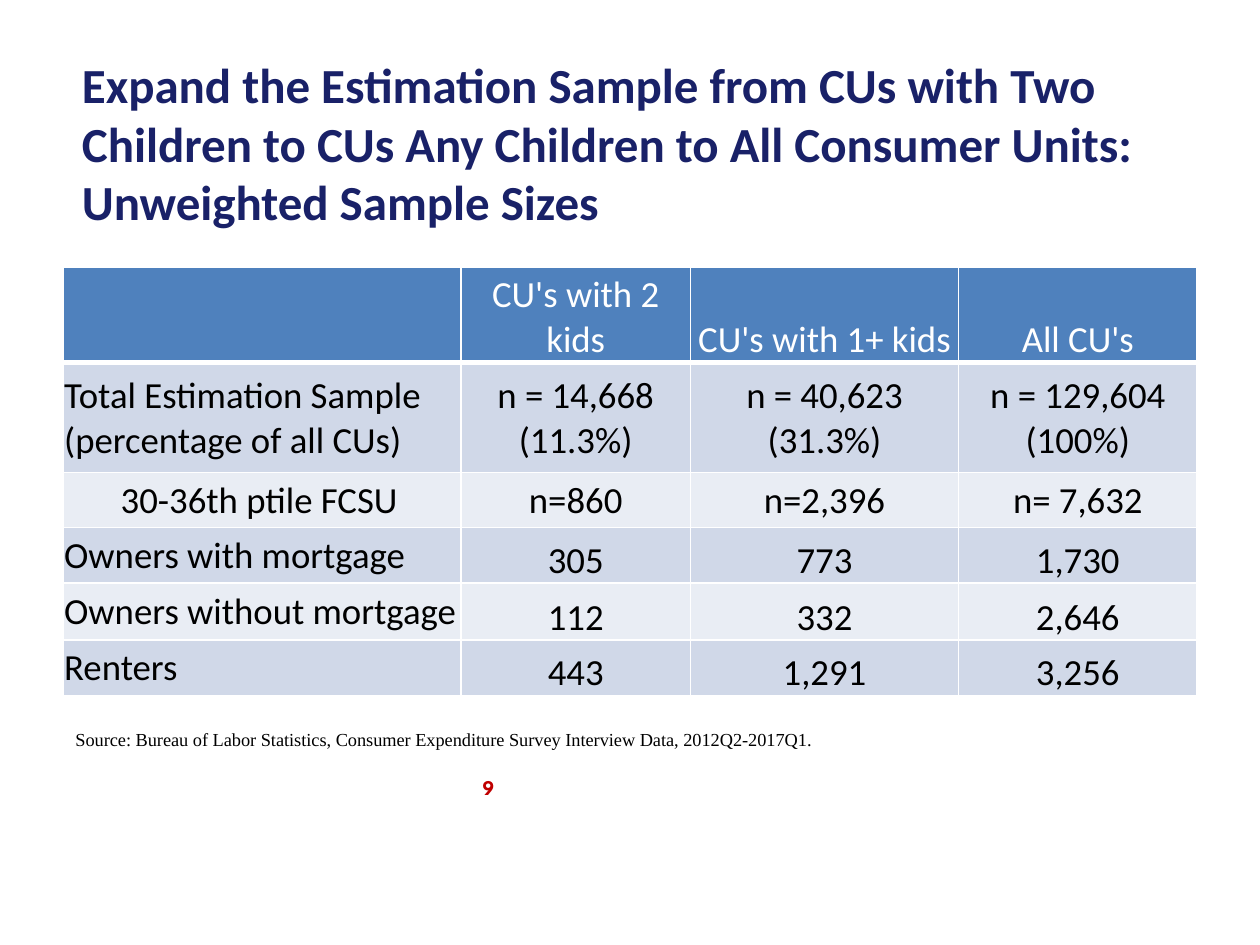
from lxml import etree
from pptx import Presentation
from pptx import util as u
from pptx.dml.color import RGBColor
from pptx.enum import text
from pptx.oxml import ns

Pt = u.Pt
COLORS = {"title": "192168", "header": "4F81BD", "odd": "D0D8E8", "even": "E9EDF4",
          "white": "FFFFFF", "black": "000000", "number": "C00000"}
FORMATS = {
    "title": {"name": "Calibri", "size": Pt(28), "bold": True},
    "cell": {"name": "Calibri", "size": Pt(21), "bold": False},
    "number": {"name": "League Spartan", "size": Pt(12), "bold": True},
    "source": {"name": "Times New Roman", "size": Pt(10.5), "bold": False},
}
COL_WIDTHS = [227.5, 131, 153.4, 136.1]
ROW_HEIGHTS = [54.7, 62.6, 31.7, 31.7, 32.4, 31.7]
ROWS = [
    ["", "CU's with 2 kids", "CU's with 1+ kids", "All CU's"],
    ["Total Estimation Sample (percentage of all CUs)",
     "n = 14,668\n(11.3%)", "n = 40,623\n(31.3%)", "n = 129,604\n(100%)"],
    ["30-36th ptile FCSU", "n=860", "n=2,396", "n= 7,632"],
    ["Owners with mortgage", "305", "773", "1,730"],
    ["Owners without mortgage", "112", "332", "2,646"],
    ["Renters", "443", "1,291", "3,256"],
]
SUBGROUP_ROW = 2
SUBGROUP_INDENT = 33
BOTTOM_ROWS = (0, 3, 4, 5)
LEFT, CENTER = text.PP_ALIGN.LEFT, text.PP_ALIGN.CENTER
MIDDLE, BOTTOM = text.MSO_ANCHOR.MIDDLE, text.MSO_ANCHOR.BOTTOM


class Deck:
    """Holds the style and the current slide."""

    def __init__(self):
        self.prs = Presentation()
        self.prs.slide_width, self.prs.slide_height = Pt(720), Pt(540)
        self.s = self.prs.slides.add_slide(self.prs.slide_layouts[5])

    def set_text(self, tf, words, style, color, align=LEFT):
        tf.text = words
        for p in tf.paragraphs:
            p.alignment = align
            for item in (p, *p.runs):
                for name, value in FORMATS[style].items():
                    setattr(item.font, name, value)
                item.font.color.rgb = RGBColor.from_string(COLORS[color])

    def frame(self, tf, inset_x=0, inset_y=0):
        tf.word_wrap = True
        tf.auto_size = text.MSO_AUTO_SIZE.NONE
        tf.vertical_anchor = text.MSO_ANCHOR.TOP
        tf.margin_left = tf.margin_right = Pt(inset_x)
        tf.margin_top = tf.margin_bottom = Pt(inset_y)

    def title(self, words, x, y, w, h):
        sp = self.s.shapes.title
        sp.left, sp.top, sp.width, sp.height = map(Pt, (x, y, w, h))
        self.frame(sp.text_frame)
        self.set_text(sp.text_frame, words, "title", "title")

    def label(self, words, x, y, w, h, style, color, inset_x=0, inset_y=0):
        sp = self.s.shapes.add_textbox(*map(Pt, (x, y, w, h)))
        self.frame(sp.text_frame, inset_x, inset_y)
        self.set_text(sp.text_frame, words, style, color)

    def borders(self, cell, widths):
        """Draw white edges; widths maps L, R, T, B to points, in that order."""
        tc_pr = cell._tc.get_or_add_tcPr()
        for side, width in widths.items():
            ln = etree.SubElement(tc_pr, ns.qn(f"a:ln{side}"), w=str(Pt(width)))
            fill = etree.SubElement(ln, ns.qn("a:solidFill"))
            etree.SubElement(fill, ns.qn("a:srgbClr"), val=COLORS["white"])

    def cell(self, cell, words, row, col):
        header = row == 0
        self.borders(cell, {"L": 1, "R": 1, "T": 3 if row == 1 else 1, "B": 3 if header else 1})
        cell.fill.solid()
        band = "header" if header else "odd" if row % 2 else "even"
        cell.fill.fore_color.rgb = RGBColor.from_string(COLORS[band])
        indented = row == SUBGROUP_ROW and col == 0
        cell.margin_left = Pt(SUBGROUP_INDENT if indented else 0.7)
        cell.margin_right = cell.margin_top = Pt(0.7)
        cell.margin_bottom = 0
        cell.vertical_anchor = BOTTOM if col and row in BOTTOM_ROWS else MIDDLE
        self.set_text(cell.text_frame, words, "cell", "white" if header else "black",
                      CENTER if col else LEFT)

    def table(self, rows, x, y):
        size = sum(COL_WIDTHS), sum(ROW_HEIGHTS)
        table = self.s.shapes.add_table(len(rows), len(rows[0]), *map(Pt, (x, y, *size))).table
        for column, width in zip(table.columns, COL_WIDTHS):
            column.width = Pt(width)
        for i, (row, height) in enumerate(zip(rows, ROW_HEIGHTS)):
            table.rows[i].height = Pt(height)
            for j, words in enumerate(row):
                self.cell(table.cell(i, j), words, i, j)


def main():
    deck = Deck()
    deck.title("Expand the Estimation Sample from CUs with Two Children to CUs Any Children "
               "to All Consumer Units: Unweighted Sample Sizes", 46.8, 31, 626.4, 101.5)
    deck.table(ROWS, 36, 152.6)
    deck.label("9", 275.8, 442.8, 167.8, 21.6, "number", "number")
    deck.label("Source: Bureau of Labor Statistics, Consumer Expenditure Survey Interview Data, "
               "2012Q2-2017Q1.", 36, 412.6, 569.5, 20.2, "source", "black", 7.2, 3.6)
    deck.prs.save("out.pptx")


if __name__ == "__main__":
    main()
